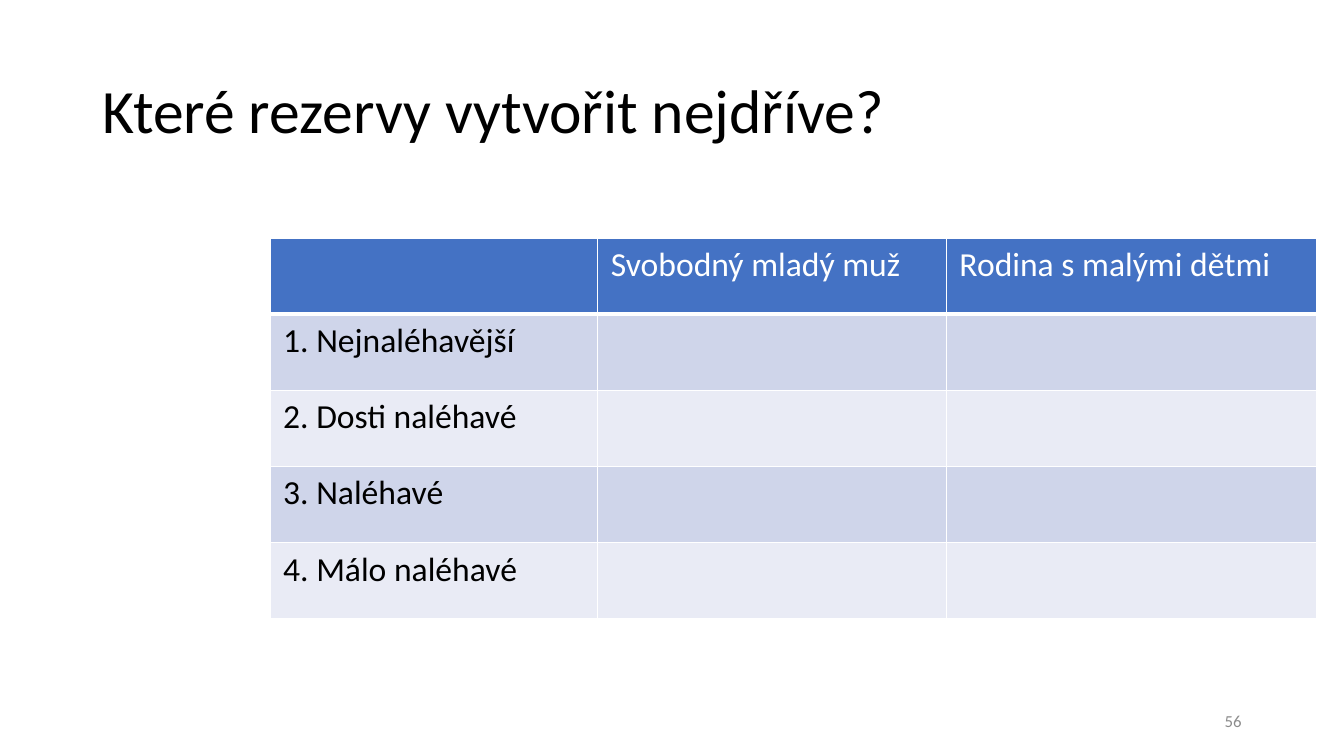
from lxml import etree
from pptx import Presentation
from pptx.dml.color import RGBColor
from pptx.enum.text import MSO_ANCHOR, PP_ALIGN
from pptx.oxml.ns import qn
from pptx.util import Pt

MIDDLE = MSO_ANCHOR.MIDDLE
LEFT, RIGHT = PP_ALIGN.LEFT, PP_ALIGN.RIGHT
FONT = "Calibri"
WHITE, BLACK, GREY = "FFFFFF", "000000", "8C8C8C"
HEAD = "4472C4"
BANDS = ["CFD5EA", "E9EBF5"]
ROWS = [
    ["", "Svobodný mladý muž", "Rodina s malými dětmi"],
    ["1. Nejnaléhavější", "", ""],
    ["2. Dosti naléhavé", "", ""],
    ["3. Naléhavé", "", ""],
    ["4. Málo naléhavé", "", ""],
]
COLS = [234, 249.1, 264.2]


def color(code):
    return RGBColor.from_string(code)


def add_run(para, text, size, code):
    run = para.add_run()
    run.text = text
    font = run.font
    font.name, font.size, font.bold = FONT, Pt(size), False
    font.color.rgb = color(code)


def add_label(slide, box, text, size, code, align=LEFT, spacing=1.0):
    shape = slide.shapes.add_textbox(*[Pt(n) for n in box])
    frame = shape.text_frame
    frame.word_wrap = True
    frame.vertical_anchor = MIDDLE
    para = frame.paragraphs[0]
    para.alignment = align
    para.line_spacing = spacing
    add_run(para, text, size, code)


def add_edges(cell, base):
    """Draw white cell borders, with the bottom one of the given width."""
    props = cell._tc.get_or_add_tcPr()
    for tag, width in (("lnL", 1), ("lnR", 1), ("lnT", 1), ("lnB", base)):
        line = etree.SubElement(props, qn("a:" + tag), w=str(Pt(width)))
        fill = etree.SubElement(line, qn("a:solidFill"))
        etree.SubElement(fill, qn("a:srgbClr"), val=WHITE)


def add_grid(slide, box):
    left, top, width, height = [Pt(n) for n in box]
    frame = slide.shapes.add_table(len(ROWS), len(COLS), left, top, width, height)
    table = frame.table
    for col, size in zip(table.columns, COLS):
        col.width = Pt(size)
    for i, texts in enumerate(ROWS):
        table.rows[i].height = height // len(ROWS)
        for j, text in enumerate(texts):
            cell = table.cell(i, j)
            cell.margin_left = cell.margin_right = Pt(9.4)
            cell.margin_top = cell.margin_bottom = Pt(4.7)
            add_edges(cell, 1 if i else 3)
            cell.fill.solid()
            cell.fill.fore_color.rgb = color(BANDS[(i - 1) % 2] if i else HEAD)
            if text:
                para = cell.text_frame.paragraphs[0]
                add_run(para, text, 24, BLACK if i else WHITE)


def main():
    deck = Presentation()
    deck.slide_width, deck.slide_height = Pt(960), Pt(540)
    slide = deck.slides.add_slide(deck.slide_layouts[6])
    add_label(slide, (66, 28.75, 828, 104.4), "Které rezervy vytvořit nejdříve?",
              44, BLACK, spacing=0.9)
    add_grid(slide, (192.9, 170.2, sum(COLS), 271.8))
    add_label(slide, (678, 500.5, 216, 28.75), "56", 12, GREY, RIGHT)
    deck.save("out.pptx")


if __name__ == "__main__":
    main()
